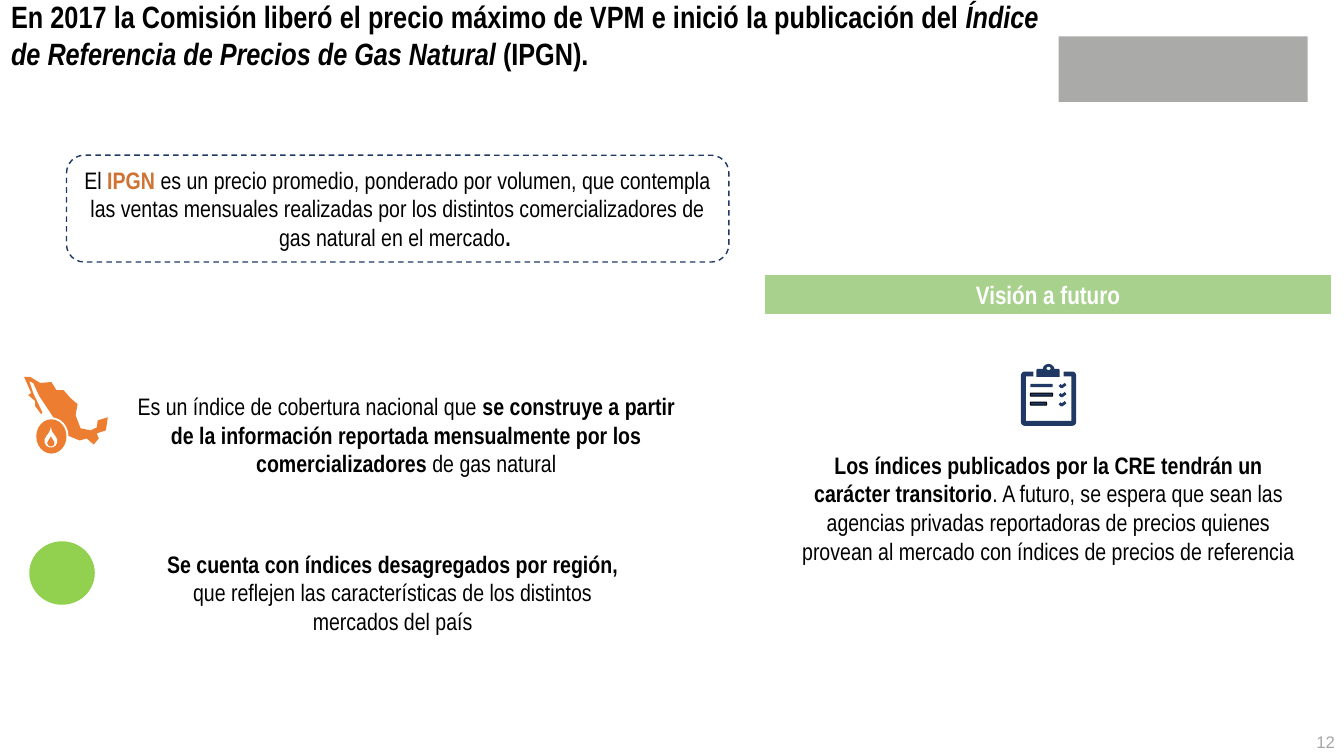
from pptx import Presentation
from pptx.dml.color import RGBColor
from pptx.enum.dml import MSO_LINE
from pptx.enum.shapes import MSO_SHAPE
from pptx.enum.text import MSO_ANCHOR, MSO_AUTO_SIZE, PP_ALIGN
from pptx.util import Inches, Pt

CENTER, RIGHT, JUSTIFY = PP_ALIGN.CENTER, PP_ALIGN.RIGHT, PP_ALIGN.JUSTIFY
TOP, MIDDLE = MSO_ANCHOR.TOP, MSO_ANCHOR.MIDDLE
RECTANGLE, ROUNDED, OVAL = MSO_SHAPE.RECTANGLE, MSO_SHAPE.ROUNDED_RECTANGLE, MSO_SHAPE.OVAL
TEAR, ROUND_TOP = MSO_SHAPE.TEAR, MSO_SHAPE.ROUND_2_SAME_RECTANGLE
NAVY, ORANGE, GREEN, LIME = "203864", "ED7D31", "A9D18E", "92D050"
BLACK, WHITE, GRAY, PAGE_GRAY, COPPER = "000000", "FFFFFF", "AAAAA9", "A6A6A6", "CE7334"
PLAIN, BOLD = {}, {"bold": True}
HUNDREDTH = Inches(0.01)  # unit of the freeform points


def paint(shape, fill=None, line=None, width=0.75):
    """Set fill and line from hex strings; None leaves that part empty."""
    shape.shadow.inherit = False
    for part, color in ((shape.fill, fill), (shape.line.fill, line)):
        if color:
            part.solid()
            part.fore_color.rgb = RGBColor.from_string(color)
        else:
            part.background()
    if line:
        shape.line.width = Pt(width)
    return shape


def write(shape, *runs, size=17, color=BLACK, font="Arial Narrow", align=CENTER, anchor=TOP):
    """Each run is (text, format), where format holds bold, italic or color."""
    frame = shape.text_frame
    frame.word_wrap = True
    frame.auto_size = MSO_AUTO_SIZE.NONE
    frame.vertical_anchor = anchor
    paragraph = frame.paragraphs[0]
    paragraph.alignment = align
    for text, look in runs:
        run = paragraph.add_run()
        run.text = text
        run.font.name = font
        run.font.size = Pt(size)
        run.font.bold = look.get("bold", False)
        run.font.italic = look.get("italic", False)
        run.font.color.rgb = RGBColor.from_string(look.get("color", color))


prs = Presentation()
prs.slide_width, prs.slide_height = Inches(13.33), Inches(7.5)
slide = prs.slides.add_slide(prs.slide_layouts[5])
shapes = slide.shapes

# Title
title = shapes.title
title.left, title.top = Inches(0.01), Inches(-0.07)
title.width, title.height = Inches(10.39), Inches(0.84)
write(title,
      ("En 2017 la Comisión liberó el precio máximo de VPM e inició la publicación del ", BOLD),
      ("Índice de Referencia de Precios de Gas Natural", {"bold": True, "italic": True}),
      (" (IPGN).", BOLD), size=22, align=JUSTIFY)

# Plain block in the agency's emblem position
paint(shapes.add_shape(RECTANGLE, *map(Inches, (10.5, 0.36, 2.47, 0.65))), GRAY)

# Definition of the index
definition = shapes.add_shape(ROUNDED, *map(Inches, (0.66, 1.54, 6.57, 1.06)))
paint(definition, line=NAVY, width=1)
definition.line.dash_style = MSO_LINE.DASH
write(definition, ("El", PLAIN), (" IPGN ", {"bold": True, "color": COPPER}),
      ("es un precio promedio, ponderado por volumen, que contempla las ventas mensuales "
       "realizadas por los distintos comercializadores de gas natural en el mercado", PLAIN),
      (". ", BOLD))

# Future vision band
vision = shapes.add_shape(RECTANGLE, *map(Inches, (7.58, 2.72, 5.63, 0.4)))
paint(vision, GREEN, WHITE, 1)
write(vision, ("Visión a futuro", BOLD), size=18, color=WHITE)

# Body texts and page number
coverage = [
    ("Es un índice de cobertura nacional que ", PLAIN),
    ("se construye a partir de la información reportada mensualmente por los "
     "comercializadores ", BOLD),
    ("de gas natural", PLAIN)]
regions = [
    ("Se cuenta con índices desagregados por región, ", BOLD),
    ("que reflejen las características de los distintos mercados del país", PLAIN)]
transition = [
    ("Los índices publicados por la CRE tendrán un carácter transitorio", BOLD),
    (". A futuro, se espera que sean las agencias privadas reportadoras de precios "
     "quienes provean al mercado con índices de precios de referencia", PLAIN)]
page_look = {"size": 12, "color": PAGE_GRAY, "font": "Arial", "align": RIGHT, "anchor": MIDDLE}
for area, runs, look in (
        ((1.2, 3.84, 5.66, 0.96), coverage, {}),
        ((1.39, 5.4, 5.01, 0.96), regions, {}),
        ((7.83, 4.42, 5.14, 1.25), transition, {}),
        ((11.78, 7.18, 1.56, 0.36), [("12", PLAIN)], page_look)):
    write(shapes.add_textbox(*map(Inches, area)), *runs, **look)

# Map of Mexico, clockwise from the north-west, one stretch of coast at a time
north_and_gulf = [(30, 374), (40, 380), (51, 379), (56, 387), (63, 387), (70, 395), (77, 401),
                  (75, 412), (80, 425), (90, 427), (96, 424), (97, 417), (107, 414)]
caribbean_and_south = [(105, 427), (96, 430), (98, 435), (93, 441)]
pacific = [(86, 435), (79, 437), (67, 432), (53, 414), (39, 393), (33, 380)]
baja_peninsula = [(29, 378), (33, 390), (42, 409), (41, 411), (35, 403), (35, 398),
                  (28, 392), (31, 390), (24, 374)]
coast = north_and_gulf + caribbean_and_south + pacific + baja_peninsula
mexico = shapes.build_freeform(*coast[0], scale=HUNDREDTH)
mexico.add_line_segments(coast[1:], close=True)
paint(mexico.convert_to_shape(), ORANGE)

# Gas badge with its white ring, and the region marker
for area, color in (((0.34, 4.14, 0.34, 0.38), WHITE),
                    ((0.36, 4.16, 0.3, 0.34), ORANGE),
                    ((0.29, 5.37, 0.65, 0.63), LIME)):
    paint(shapes.add_shape(OVAL, *map(Inches, area)), color)

# Flame: a white drop around an orange one, both turned tip up
for area, color, tip in (((0.44, 4.31, 0.13, 0.13), WHITE, 1.5),
                         ((0.47, 4.36, 0.07, 0.07), ORANGE, 1.3)):
    drop = paint(shapes.add_shape(TEAR, *map(Inches, area)), color)
    drop.adjustments[0] = tip
    drop.rotation = -45

# Clipboard: framed board, gap in the frame, clip, its handle and its hole
board = shapes.add_shape(ROUNDED, *map(Inches, (10.15, 3.71, 0.5, 0.49)))
board.adjustments[0] = 0.03
paint(board, line=NAVY, width=3.5)
for preset, area, color in (
        (RECTANGLE, (10.25, 3.67, 0.3, 0.07), WHITE),
        (ROUND_TOP, (10.28, 3.66, 0.23, 0.08), NAVY),
        (OVAL, (10.34, 3.61, 0.12, 0.12), NAVY),
        (OVAL, (10.38, 3.64, 0.04, 0.03), WHITE)):
    paint(shapes.add_shape(preset, *map(Inches, area)), color)

# Checklist: one text line and one tick per row
row_gap = 0.09
for row, line_width in enumerate((0.22, 0.22, 0.16)):
    area = (10.22, 3.81 + row * row_gap, line_width, 0.03)
    paint(shapes.add_shape(ROUNDED, *map(Inches, area)), NAVY, BLACK if row else None)
    tick_top = 381 + round(row * row_gap * 100)
    tick = shapes.build_freeform(1051, tick_top + 1, scale=HUNDREDTH)
    tick.add_line_segments([(1053, tick_top + 3), (1057, tick_top)], close=False)
    paint(tick.convert_to_shape(), line=NAVY, width=2)

prs.save("out.pptx")
